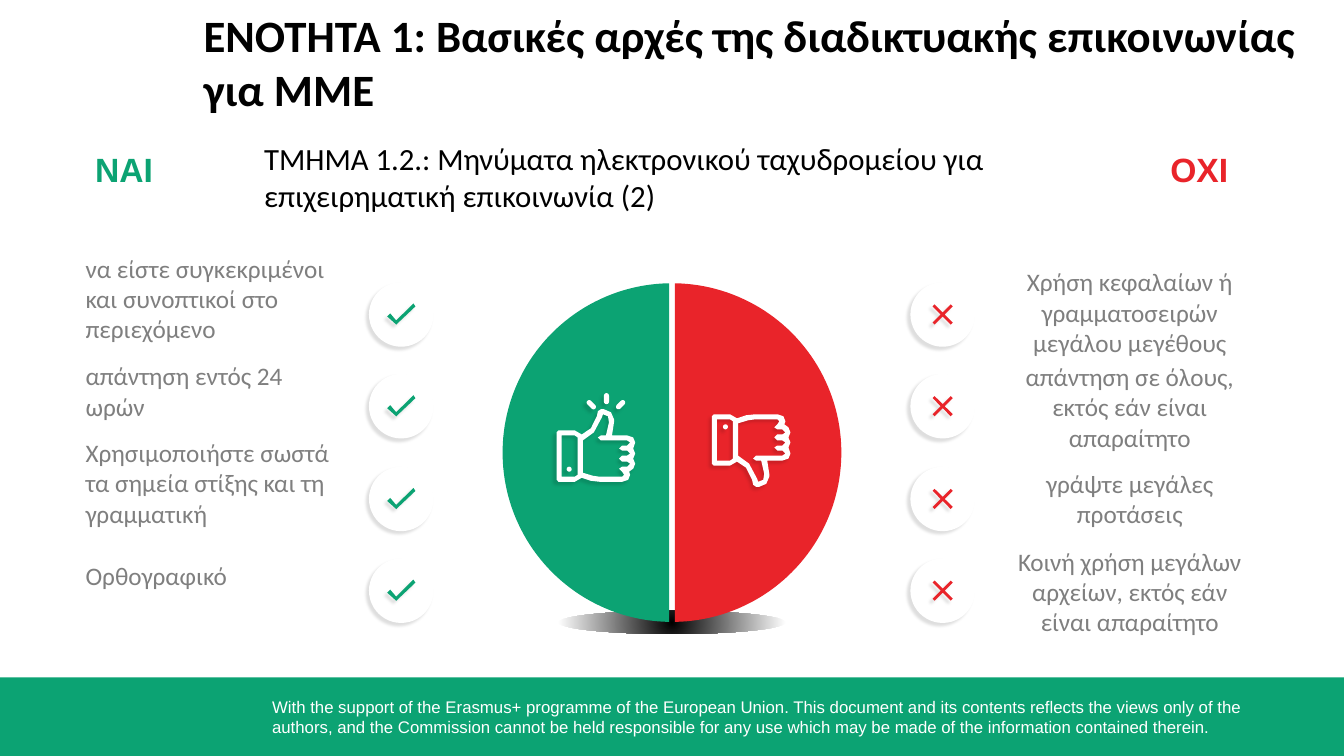
from math import cos, radians, sin

from lxml.etree import SubElement
from pptx import Presentation
from pptx.dml.color import RGBColor
from pptx.enum.shapes import MSO_SHAPE as Kind
from pptx.enum.text import MSO_ANCHOR as Anchor, PP_ALIGN as Align
from pptx.oxml.ns import qn
from pptx.util import Pt

PX = 9144  # EMU in one px, 100 px to the inch

GREEN = RGBColor(0x0C, 0xA3, 0x73)
RED = RGBColor(0xE9, 0x24, 0x2A)
GREY = RGBColor(0x7F, 0x7F, 0x7F)
BLACK = RGBColor(0, 0, 0)
WHITE = RGBColor(255, 255, 255)

TICK = [(27, 38), (21, 31), (18, 34), (27, 42), (46, 24), (44, 21)]
CROSS = [(42, 24), (40, 22), (32, 30), (24, 22), (22, 24), (30, 32),
         (22, 40), (24, 42), (32, 34), (40, 42), (42, 40), (34, 32)]
HAND = [
    [(76, 39), (78, 33), (76, 28), (70, 26), (55, 26), (57, 13), (57, 10),
     (54, 3), (47, 0), (44, 0), (41, 2), (40, 7), (34, 19), (25, 25),
     (18, 21), (2, 21), (0, 23), (0, 70), (2, 72), (18, 72), (25, 68),
     (34, 71), (43, 72), (65, 72), (71, 70), (73, 65), (72, 62), (76, 59),
     (78, 54), (76, 49), (78, 44)],
    [(21, 65), (18, 67), (5, 67), (5, 26), (18, 26), (21, 28)],
    [(65, 41), (70, 41), (73, 44), (70, 46), (65, 46), (62, 49), (65, 52),
     (70, 52), (73, 54), (70, 57), (65, 57), (62, 59), (65, 62), (67, 65),
     (65, 67), (43, 67), (36, 66), (26, 63), (26, 31), (37, 23), (45, 8),
     (46, 5), (51, 7), (52, 13), (49, 26), (44, 26), (41, 28), (44, 31),
     (70, 31), (73, 33), (70, 36), (65, 36), (62, 39)],
]
HAND_H = 72

# text, top, height
DOS = [
    ("να είστε συγκεκριμένοι και συνοπτικοί στο περιεχόμενο", 246, 101),
    ("απάντηση εντός 24 ωρών", 353, 71),
    ("Χρησιμοποιήστε σωστά τα σημεία στίξης και τη γραμματική", 429, 101),
    ("Ορθογραφικό", 551, 41),
]
DONTS = [
    ("Χρήση κεφαλαίων ή γραμματοσειρών μεγάλου μεγέθους", 259, 101),
    ("απάντηση σε όλους, εκτός εάν είναι απαραίτητο", 353, 101),
    ("γράψτε μεγάλες προτάσεις", 459, 71),
    ("Κοινή χρήση μεγάλων αρχείων, εκτός εάν είναι απαραίτητο", 536, 101),
]


def paint(shape, color, shade=False):
    """Set a plain fill without outline and, if asked, a faint shadow."""
    shape.fill.solid()
    shape.fill.fore_color.rgb = color
    shape.line.fill.background()
    shape.shadow.inherit = False
    if shade:
        effects = shape._element.spPr.find(qn("a:effectLst"))
        outer = SubElement(effects, qn("a:outerShdw"), blurRad=str(Pt(2)),
                           dist=str(Pt(3)), dir="8100000", algn="tr",
                           rotWithShape="0")
        tint = SubElement(outer, qn("a:srgbClr"), val=str(BLACK))
        SubElement(tint, qn("a:alpha"), val="12000")


def add_form(slide, kind, box, color, shade=False, turn=0):
    shape = slide.shapes.add_shape(kind, *(n * PX for n in box))
    shape.rotation = turn
    paint(shape, color, shade)
    return shape


def add_path(slide, rings, color, shade=False, left=0, top=0):
    """Draw closed rings as one outline; inner rings are holes."""
    pen = None
    for ring in rings:
        first, *rest = [((left + x) * PX, (top + y) * PX) for x, y in ring]
        if pen is None:
            pen = slide.shapes.build_freeform(*first, scale=1.0)
        else:
            pen.move_to(*first)
        pen.add_line_segments(rest, close=True)
    paint(pen.convert_to_shape(), color, shade)


def add_text(slide, text, box, *, size=18, font="Calibri", color=GREY,
             bold=False, align=Align.LEFT, anchor=Anchor.TOP,
             pad=(10, 5, 10, 5)):
    frame = slide.shapes.add_textbox(*(n * PX for n in box)).text_frame
    frame.word_wrap = True
    frame.vertical_anchor = anchor
    (frame.margin_left, frame.margin_top,
     frame.margin_right, frame.margin_bottom) = (n * PX for n in pad)
    para = frame.paragraphs[0]
    para.alignment = align
    run = para.add_run()
    run.text = text
    run.font.size = Pt(size)
    run.font.name = font
    run.font.bold = bold
    run.font.color.rgb = color


def add_glow(slide):
    """Draw the dark oval that fades to white under the disc."""
    oval = add_form(slide, Kind.OVAL, (554, 606, 225, 23), BLACK)
    oval.fill.gradient()
    for stop, color in zip(oval.fill.gradient_stops, (BLACK, WHITE)):
        stop.color.rgb = color
    grad = oval._element.spPr.find(qn("a:gradFill"))
    grad.remove(grad.find(qn("a:lin")))
    round_ = SubElement(grad, qn("a:path"), {"path": "circle"})
    SubElement(round_, qn("a:fillToRect"),
               {side: "50000" for side in "ltrb"})


def add_half(slide, side, color):
    """Draw half of the disc: side is -1 for left, 1 for right."""
    angles = [radians(deg) for deg in range(1, 180, 2)]
    arc = [(666.5 + side * 168 * sin(a), 449 - 168 * cos(a)) for a in angles]
    add_path(slide, [arc], color)


def add_thumbs(slide):
    add_path(slide, HAND, WHITE, True, 552, 406)
    flip = [[(x, HAND_H - y) for x, y in ring] for ring in HAND]
    add_path(slide, flip, WHITE, True, 706, 411)
    for left, top in ((562, 463), (717, 421)):
        add_form(slide, Kind.OVAL, (left, top, 5, 5), WHITE, True)
    for left, top, turn in ((584, 396, -45), (599, 390, 0), (613, 396, 45)):
        spark = add_form(slide, Kind.ROUNDED_RECTANGLE, (left, top, 5, 11),
                         WHITE, True, turn)
        spark.adjustments[0] = 0.5


def add_marks(slide, left, sign, color):
    for row in range(4):
        top = 280 + round(row * 274 / 3)
        add_form(slide, Kind.OVAL, (left, top, 64, 64), WHITE, True)
        add_path(slide, [sign], color, True, left, top)


def add_list(slide, items, left, align, anchor):
    for text, top, height in items:
        add_text(slide, text, (left, top, 265, height),
                 align=align, anchor=anchor)


def main():
    deck = Presentation()
    deck.slide_width, deck.slide_height = 1333 * PX, 750 * PX
    slide = deck.slides.add_slide(deck.slide_layouts[6])

    add_form(slide, Kind.RECTANGLE, (0, 672, 1333, 78), GREEN)
    add_text(slide, "With the support of the Erasmus+ programme of the "
             "European Union. This document and its contents reflects the "
             "views only of the authors, and the Commission cannot be held "
             "responsible for any use which may be made of the information "
             "contained therein.", (260, 686, 1042, 50),
             size=12, font="Arial", color=WHITE)

    add_glow(slide)
    add_half(slide, -1, GREEN)
    add_half(slide, 1, RED)
    add_thumbs(slide)

    for word, left, width, color in (("ΝΑΙ", 72, 102, GREEN),
                                     ("ΟΧΙ", 1116, 147, RED)):
        add_text(slide, word, (left, 143, width, 50), size=24, font="Arial",
                 color=color, bold=True, align=Align.CENTER,
                 anchor=Anchor.MIDDLE)
    add_marks(slide, 903, CROSS, RED)
    add_marks(slide, 366, TICK, GREEN)
    add_list(slide, DONTS, 988, Align.CENTER, Anchor.MIDDLE)
    add_list(slide, DOS, 75, Align.LEFT, Anchor.TOP)

    add_text(slide, "ΤΜΗΜΑ 1.2.: Μηνύματα ηλεκτρονικού ταχυδρομείου για "
             "επιχειρηματική επικοινωνία (2)", (261, 137, 842, 76),
             size=22, color=BLACK, pad=(1, 2, 0, 0))
    add_text(slide, "ΕΝΟΤΗΤΑ 1: Βασικές αρχές της διαδικτυακής επικοινωνίας "
             "για ΜΜΕ", (201, 7, 1121, 109),
             size=32, color=BLACK, bold=True, pad=(1, 1, 0, 0))
    deck.save("out.pptx")


if __name__ == "__main__":
    main()
